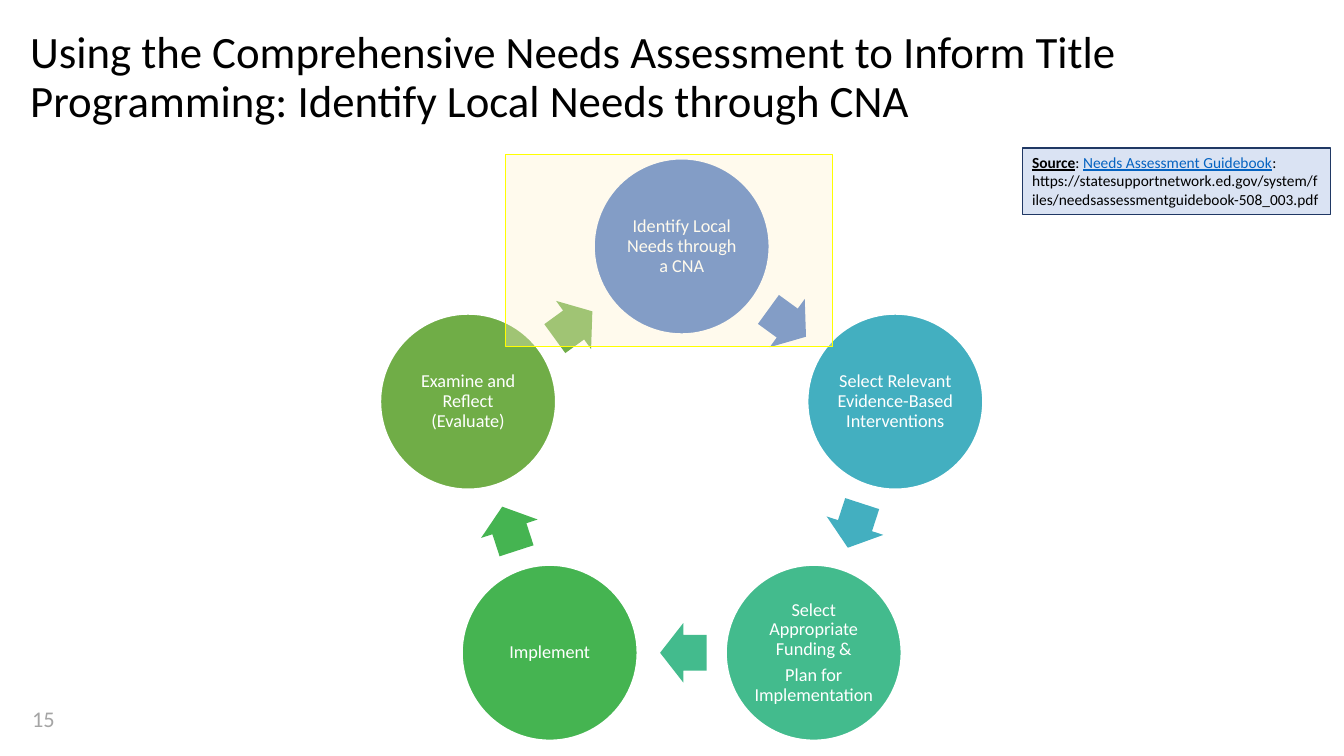
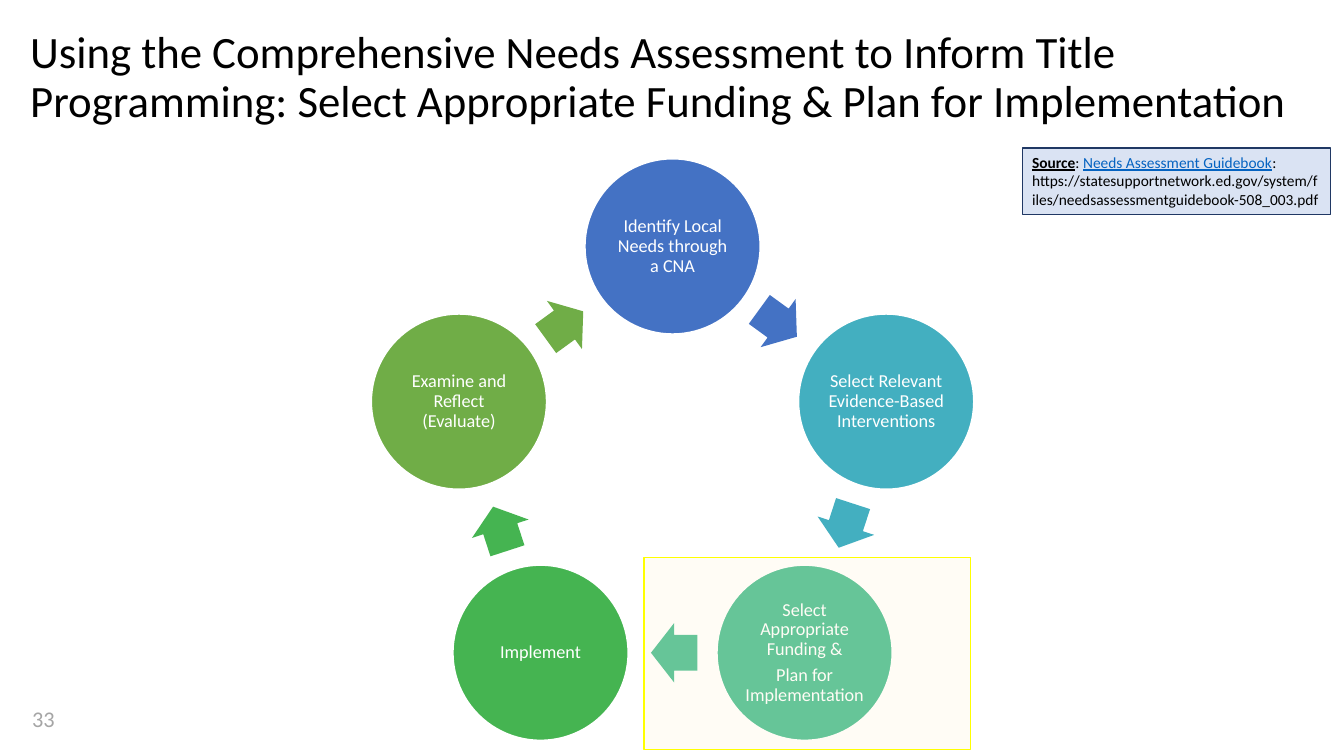
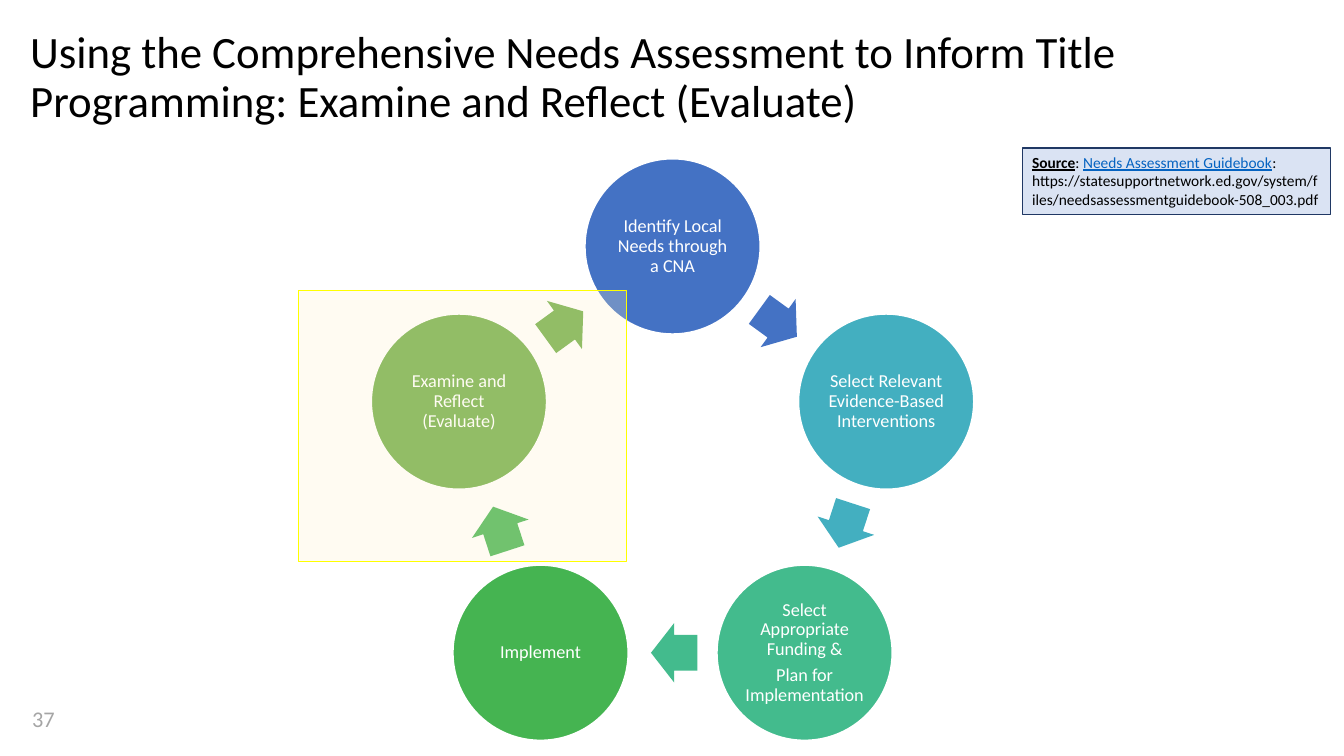
from math import cos, radians, sin

from lxml import etree
from pptx import Presentation
from pptx.dml.color import RGBColor
from pptx.enum.shapes import MSO_SHAPE as Preset
from pptx.enum.text import MSO_ANCHOR as Anchor, MSO_AUTO_SIZE as AutoSize, PP_ALIGN as Align
from pptx.oxml.ns import qn
from pptx.util import Cm, Pt

BLACK = RGBColor(0x00, 0x00, 0x00)
WHITE = RGBColor(0xFF, 0xFF, 0xFF)
GREY = RGBColor(0xA5, 0xA5, 0xA5)
BLUE = RGBColor(0x44, 0x72, 0xC4)
TURQUOISE = RGBColor(0x43, 0xAF, 0xC0)
SEA_GREEN = RGBColor(0x43, 0xBB, 0x8D)
GREEN = RGBColor(0x45, 0xB4, 0x51)
OLIVE = RGBColor(0x70, 0xAD, 0x47)
CREAM = RGBColor(0xFF, 0xF2, 0xCC)
YELLOW = RGBColor(0xFF, 0xFF, 0x00)
PALE_BLUE = RGBColor(0xDA, 0xE3, 0xF3)
NAVY = RGBColor(0x20, 0x38, 0x64)
LINK_BLUE = RGBColor(0x05, 0x63, 0xC1)

TITLE_START = "Using the Comprehensive Needs Assessment to Inform Title Programming: "

# Lengths are centimetres; a highlight is left, top, width, height, opacity in percent.
SLIDES = [
    {"topic": "Identify Local Needs through CNA", "number": "15",
     "title_width": 30.91, "cycle_x": 17.18, "highlight": (12.75, 3.89, 8.23, 4.85, 34)},
    {"topic": "Select Appropriate Funding & Plan for Implementation", "number": "33",
     "title_width": 32.77, "cycle_x": 16.95, "highlight": (16.23, 14.05, 8.23, 4.85, 19)},
    {"topic": "Examine and Reflect (Evaluate)", "number": "37",
     "title_width": 30.91, "cycle_x": 16.95, "highlight": (7.52, 7.32, 8.28, 6.83, 24)},
]

STEPS = [
    (["Identify Local Needs through a CNA"], BLUE),
    (["Select Relevant Evidence-Based Interventions"], TURQUOISE),
    (["Select Appropriate Funding &", "Plan for Implementation"], SEA_GREEN),
    (["Implement"], GREEN),
    (["Examine and Reflect (Evaluate)"], OLIVE),
]

SOURCE_RUNS = [
    ("Source", {"bold": True, "underline": True}),
    (": ", {}),
    ("Needs Assessment Guidebook", {"color": LINK_BLUE, "underline": True}),
    (": https://statesupportnetwork.ed.gov/system/files/needsassessmentguidebook-508_003.pdf", {}),
]

CYCLE_Y, CYCLE_RADIUS = 11.87, 5.66
CIRCLE_SIZE = 4.45
ARROW_WIDTH, ARROW_HEIGHT, ARROW_SETBACK = 1.17, 1.5, 0.04


def set_attributes(target, **values):
    for name, value in values.items():
        setattr(target, name, value)


def format_font(font, size, color, **values):
    set_attributes(font, name="Calibri", size=Pt(size), **values)
    font.color.rgb = color


def set_margins(frame, margin):
    for side in ("left", "top", "right", "bottom"):
        setattr(frame, f"margin_{side}", Cm(margin))


def add_filled(shapes, preset, box, fill, line=None, line_width=0.75):
    shape = shapes.add_shape(preset, *map(Cm, box))
    shape.shadow.inherit = False
    shape.fill.solid()
    shape.fill.fore_color.rgb = fill
    if line is None:
        shape.line.fill.background()
    else:
        shape.line.color.rgb = line
        shape.line.width = Pt(line_width)
    return shape


def centred_box(x, y, width, height):
    return x - width / 2, y - height / 2, width, height


def add_title(slide, topic, width):
    title = slide.shapes.title
    set_attributes(title, left=Cm(0.76), top=Cm(0.76), width=Cm(width), height=Cm(1.98))
    frame = title.text_frame
    set_attributes(frame, word_wrap=True, auto_size=AutoSize.NONE, vertical_anchor=Anchor.TOP)
    set_margins(frame, 0)
    frame.text = TITLE_START + topic
    paragraph = frame.paragraphs[0]
    set_attributes(paragraph, alignment=Align.LEFT, line_spacing=0.9)
    format_font(paragraph.runs[0].font, 32, BLACK)


def add_number(slide, number):
    frame = slide.shapes.add_textbox(Cm(0.23), Cm(17.65), Cm(1.73), Cm(1.02)).text_frame
    frame.word_wrap = True
    frame.text = number
    frame.paragraphs[0].alignment = Align.CENTER
    format_font(frame.paragraphs[0].runs[0].font, 16, GREY)


def add_step(shapes, x, y, lines, color):
    box = centred_box(x, y, CIRCLE_SIZE, CIRCLE_SIZE)
    frame = add_filled(shapes, Preset.OVAL, box, color, WHITE, 2).text_frame
    set_attributes(frame, word_wrap=True, vertical_anchor=Anchor.MIDDLE)
    set_margins(frame, 0.05)
    frame.text = "\n".join(lines)
    for index, paragraph in enumerate(frame.paragraphs):
        set_attributes(paragraph, alignment=Align.CENTER, line_spacing=0.9)
        if index:
            paragraph.space_before = Pt(4.5)
        format_font(paragraph.runs[0].font, 13, WHITE)


def add_cycle(slide, center_x):
    """Place the steps on a regular pentagon, with an arrow between neighbours."""
    shapes = slide.shapes.add_group_shape().shapes
    turn = 360 / len(STEPS)
    middle_radius = CYCLE_RADIUS * cos(radians(turn / 2))
    for index, (lines, color) in enumerate(STEPS):
        angle = radians(index * turn)
        add_step(shapes, center_x + CYCLE_RADIUS * sin(angle),
                 CYCLE_Y - CYCLE_RADIUS * cos(angle), lines, color)
        heading = (index + 0.5) * turn
        along, across = cos(radians(heading)), sin(radians(heading))
        arrow_x = center_x + middle_radius * across - ARROW_SETBACK * along
        arrow_y = CYCLE_Y - middle_radius * along - ARROW_SETBACK * across
        box = centred_box(arrow_x, arrow_y, ARROW_WIDTH, ARROW_HEIGHT)
        arrow = add_filled(shapes, Preset.RIGHT_ARROW, box, color)
        arrow.adjustments[0], arrow.adjustments[1] = 0.6, 0.5
        arrow.rotation = heading


def add_highlight(slide, left, top, width, height, opacity):
    shape = add_filled(slide.shapes, Preset.RECTANGLE, (left, top, width, height), CREAM, YELLOW)
    color = shape.fill._xPr.find(qn("a:solidFill"))[0]
    etree.SubElement(color, qn("a:alpha"), val=str(opacity * 1000))


def add_source(slide):
    box = (25.76, 3.73, 7.77, 1.68)
    frame = add_filled(slide.shapes, Preset.RECTANGLE, box, PALE_BLUE, NAVY).text_frame
    set_attributes(frame, word_wrap=True, auto_size=AutoSize.SHAPE_TO_FIT_TEXT,
                   vertical_anchor=Anchor.TOP)
    paragraph = frame.paragraphs[0]
    paragraph.alignment = Align.LEFT
    for text, values in SOURCE_RUNS:
        run = paragraph.add_run()
        run.text = text
        format_font(run.font, 11, **{"color": BLACK, **values})


def main():
    presentation = Presentation()
    set_attributes(presentation, slide_width=Cm(33.87), slide_height=Cm(19.05))
    title_only = presentation.slide_layouts[5]
    for content in SLIDES:
        slide = presentation.slides.add_slide(title_only)
        add_title(slide, content["topic"], content["title_width"])
        add_number(slide, content["number"])
        add_cycle(slide, content["cycle_x"])
        add_highlight(slide, *content["highlight"])
        add_source(slide)
    presentation.save("out.pptx")


if __name__ == "__main__":
    main()
